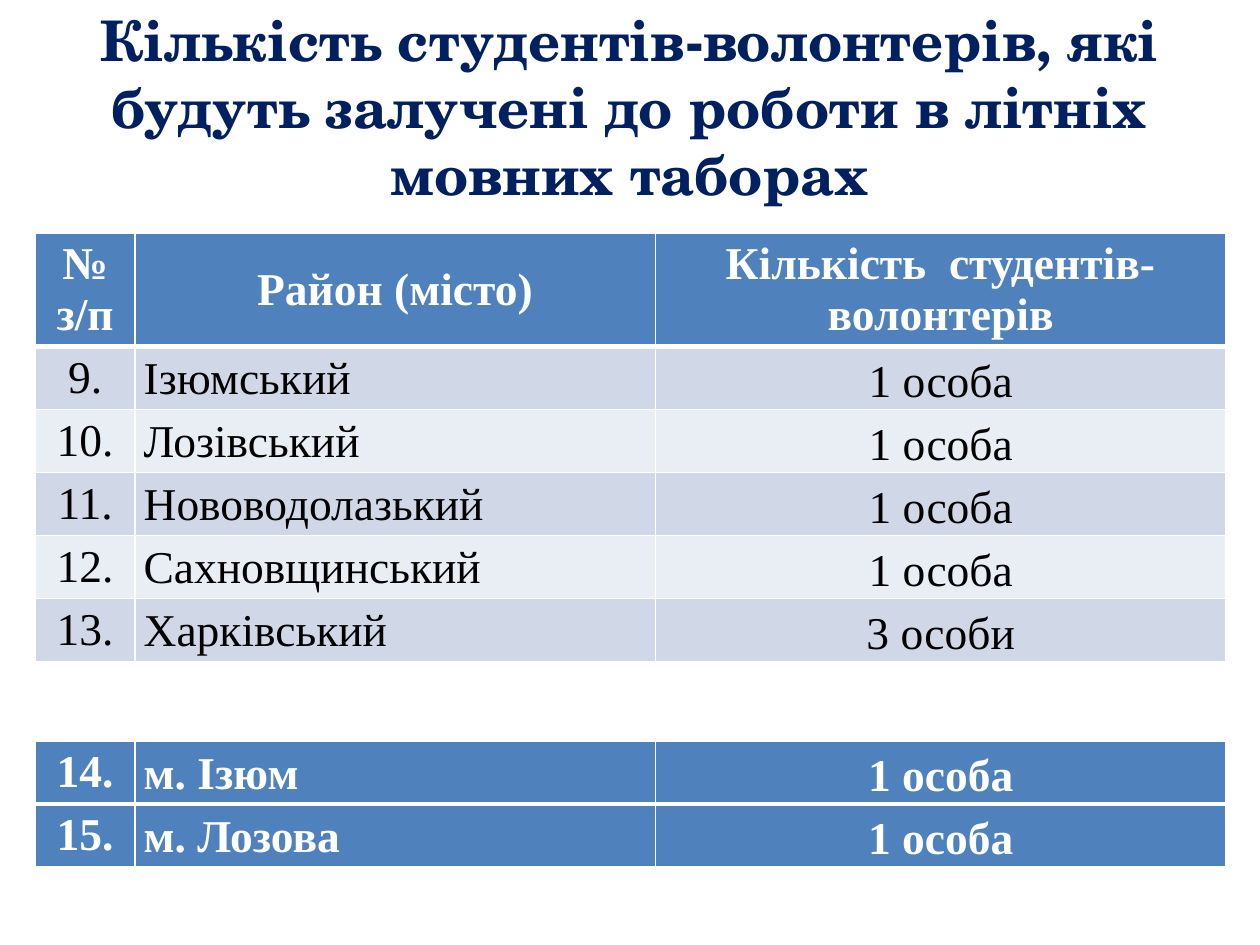
from dataclasses import dataclass

import pptx
import pptx.dml.color
import pptx.enum.text
import pptx.oxml
import pptx.oxml.ns
import pptx.util

Pt = pptx.util.Pt
ALIGN = pptx.enum.text.PP_ALIGN
ANCHOR = pptx.enum.text.MSO_ANCHOR


@dataclass(frozen=True)
class Theme:
    title: str = "002060"
    accent: str = "4F81BD"
    bands: tuple = ("D0D8E8", "E9EDF4")
    white: str = "FFFFFF"
    black: str = "000000"
    title_font: str = "TeX Gyre Schola"
    body_font: str = "Times New Roman"
    title_size: int = 32
    body_size: int = 26
    thin: int = 1
    thick: int = 3


THEME = Theme()
LEFT = 20.2
COLUMNS = (56.9, 297.4, 326.2)
HEADER_HEIGHT = 36.7
ROW_HEIGHT = 33.1

HEADER = ("№ з/п", "Район (місто)", "Кількість  студентів-волонтерів")
DISTRICTS = (
    ("9.", "Ізюмський", "1 особа"),
    ("10.", "Лозівський", "1 особа"),
    ("11.", "Нововодолазький", "1 особа"),
    ("12.", "Сахновщинський", "1 особа"),
    ("13.", "Харківський", "3 особи"),
)
CITIES = (
    ("14.", "м. Ізюм", "1 особа"),
    ("15.", "м. Лозова", "1 особа"),
)


def rgb(color):
    return pptx.dml.color.RGBColor.from_string(color)


def write(tf, text, *, font=THEME.body_font, size=THEME.body_size,
          color=THEME.black, bold=False, align=ALIGN.CENTER, spacing=None):
    p = tf.paragraphs[0]
    p.alignment = align
    if spacing:
        p.line_spacing = spacing
    r = p.add_run()
    r.text = text
    r.font.name = font
    r.font.size = Pt(size)
    r.font.bold = bold
    r.font.color.rgb = rgb(color)


def set_borders(cell, top, bottom):
    tc_pr = cell._tc.get_or_add_tcPr()
    widths = {"lnL": THEME.thin, "lnR": THEME.thin, "lnT": top, "lnB": bottom}
    for tag, width in widths.items():
        tc_pr.append(pptx.oxml.parse_xml(
            f'<a:{tag} {pptx.oxml.ns.nsdecls("a")} w="{Pt(width)}">'
            f'<a:solidFill><a:srgbClr val="{THEME.white}"/></a:solidFill>'
            f'</a:{tag}>'))


def add_title(s, text):
    sp = s.shapes.title
    sp.left, sp.top, sp.width, sp.height = Pt(0), Pt(15.8), Pt(720), Pt(90)
    tf = sp.text_frame
    tf.word_wrap = True
    tf.auto_size = pptx.enum.text.MSO_AUTO_SIZE.NONE
    tf.vertical_anchor = ANCHOR.MIDDLE
    write(tf, text, font=THEME.title_font, size=THEME.title_size,
          color=THEME.title, bold=True)


def fill_cell(cell, text, row, col, fill, emphasis, is_header):
    in_list = col > 0 and not is_header
    if in_list:
        cell.margin_left = cell.margin_right = Pt(5)
        cell.margin_top = cell.margin_bottom = Pt(0)
    is_name = in_list and col == 1
    cell.vertical_anchor = ANCHOR.TOP if is_name else ANCHOR.MIDDLE
    write(cell.text_frame, text, bold=emphasis,
          color=THEME.white if emphasis else THEME.black,
          align=ALIGN.LEFT if is_name else ALIGN.CENTER,
          spacing=1.15 if in_list else None)
    set_borders(cell, THEME.thick if row == 1 else THEME.thin,
                THEME.thick if row == 0 else THEME.thin)
    cell.fill.solid()
    cell.fill.fore_color.rgb = rgb(fill)


def add_table(s, top, rows, header=None):
    lines = ((header,) if header else ()) + rows
    heights = [ROW_HEIGHT] * len(lines)
    if header:
        heights[0] = HEADER_HEIGHT
    table = s.shapes.add_table(len(lines), len(COLUMNS), Pt(LEFT), Pt(top),
                               Pt(sum(COLUMNS)), Pt(sum(heights))).table
    for column, width in zip(table.columns, COLUMNS):
        column.width = Pt(width)
    for i, (line, height) in enumerate(zip(lines, heights)):
        table.rows[i].height = Pt(height)
        is_header = header is not None and i == 0
        emphasis = is_header or header is None
        fill = THEME.accent if emphasis else THEME.bands[(i - 1) % 2]
        for j, text in enumerate(line):
            fill_cell(table.cell(i, j), text, i, j, fill, emphasis, is_header)


def main():
    prs = pptx.Presentation()
    prs.slide_width, prs.slide_height = Pt(720), Pt(540)
    s = prs.slides.add_slide(prs.slide_layouts[5])
    add_title(s, "Кількість студентів-волонтерів, які будуть залучені "
                 "до роботи в літніх мовних таборах")
    add_table(s, 133.2, DISTRICTS, HEADER)
    add_table(s, 423.4, CITIES)
    prs.save("out.pptx")


if __name__ == "__main__":
    main()
